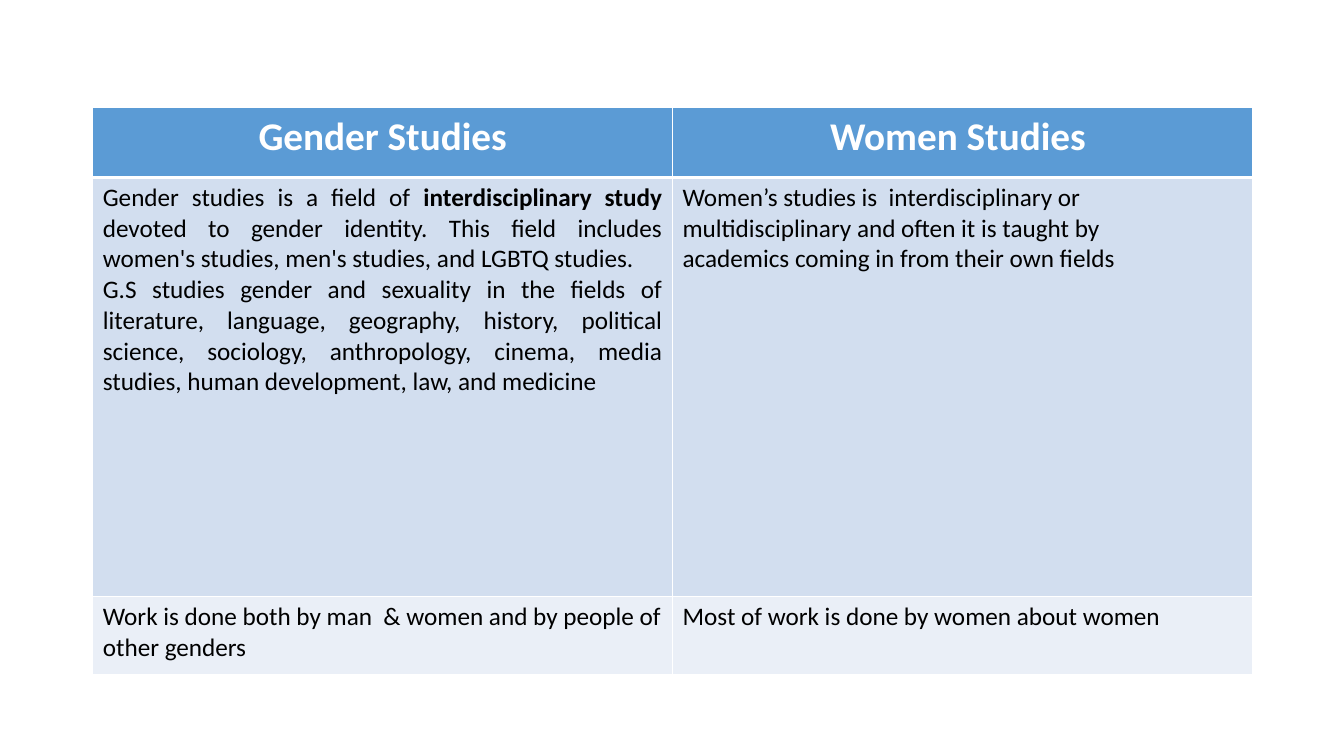
from lxml import etree
from pptx import Presentation
from pptx.dml.color import RGBColor
from pptx.enum.text import PP_ALIGN
from pptx.oxml.ns import qn
from pptx.util import Inches, Pt

LEFT, CENTER, JUSTIFY = PP_ALIGN.LEFT, PP_ALIGN.CENTER, PP_ALIGN.JUSTIFY
WHITE = RGBColor(0xFF, 0xFF, 0xFF)
BLACK = RGBColor(0x00, 0x00, 0x00)
HEADER_BLUE = RGBColor(0x5B, 0x9B, 0xD5)
BAND_BLUE = RGBColor(0xD2, 0xDE, 0xEF)
PALE_BLUE = RGBColor(0xEA, 0xEF, 0xF7)
FONT = "Calibri"

ROW_HEIGHTS = [0.69, 4.16, 0.77]
ROW_FILLS = [HEADER_BLUE, BAND_BLUE, PALE_BLUE]

# Each cell is an alignment and its paragraphs; a paragraph is (text, bold) spans
ROWS = [
    [(CENTER, [[("Gender Studies", True)]]),
     (CENTER, [[("Women Studies ", True)]])],
    [(JUSTIFY, [
        [("Gender studies is a field of ", False),
         ("interdisciplinary study ", True),
         ("devoted to gender identity. This field includes women's studies, "
          "men's studies, and LGBTQ studies. ", False)],
        [("G.S studies gender and sexuality in the fields of literature, "
          "language, geography, history, political science, sociology, "
          "anthropology, cinema, media studies, human development, law, "
          "and medicine", False)]]),
     (LEFT, [
         [("Women’s studies is  interdisciplinary or multidisciplinary "
           "and often it is taught by", False)],
         [("academics coming in from their own fields", False)]])],
    [(LEFT, [[("Work is done both by man  & women and by people of "
               "other genders", False)]]),
     (LEFT, [[("Most of work is done by women about women", False)]])],
]


def set_borders(cell, top, bottom):
    """Draw white cell borders, with top and bottom widths in points."""
    properties = cell._tc.get_or_add_tcPr()
    widths = [("a:lnL", 1), ("a:lnR", 1), ("a:lnT", top), ("a:lnB", bottom)]
    for position, (tag, width) in enumerate(widths):
        line = etree.Element(qn(tag), w=str(Pt(width)))
        fill = etree.SubElement(line, qn("a:solidFill"))
        etree.SubElement(fill, qn("a:srgbClr"), val=str(WHITE))
        properties.insert(position, line)


def fill_cell(cell, alignment, paragraphs, size, color):
    frame = cell.text_frame
    for index, spans in enumerate(paragraphs):
        para = frame.add_paragraph() if index else frame.paragraphs[0]
        para.alignment = alignment
        for text, bold in spans:
            span = para.add_run()
            span.text = text
            span.font.name = FONT
            span.font.size = Pt(size)
            span.font.bold = bold
            span.font.color.rgb = color


def add_comparison_table(page, left, top, width):
    """Place the two-column comparison in the given box."""
    columns = len(ROWS[0])
    table = page.shapes.add_table(
        len(ROWS), columns, Inches(left), Inches(top),
        Inches(width), Inches(sum(ROW_HEIGHTS))).table
    for column in table.columns:
        column.width = Inches(width / columns)
    for row_index, row in enumerate(ROWS):
        table.rows[row_index].height = Inches(ROW_HEIGHTS[row_index])
        is_header = row_index == 0
        for column_index, (alignment, paragraphs) in enumerate(row):
            cell = table.cell(row_index, column_index)
            cell.fill.solid()
            cell.fill.fore_color.rgb = ROW_FILLS[row_index]
            # A thick rule separates the header from the body
            set_borders(cell, top=3 if row_index == 1 else 1,
                        bottom=3 if is_header else 1)
            fill_cell(cell, alignment, paragraphs,
                      size=28 if is_header else 18,
                      color=WHITE if is_header else BLACK)


def main():
    deck = Presentation()
    deck.slide_width, deck.slide_height = Inches(13.33), Inches(7.5)
    page = deck.slides.add_slide(deck.slide_layouts[6])
    add_comparison_table(page, left=0.92, top=1.07, width=11.5)
    deck.save("out.pptx")


if __name__ == "__main__":
    main()
